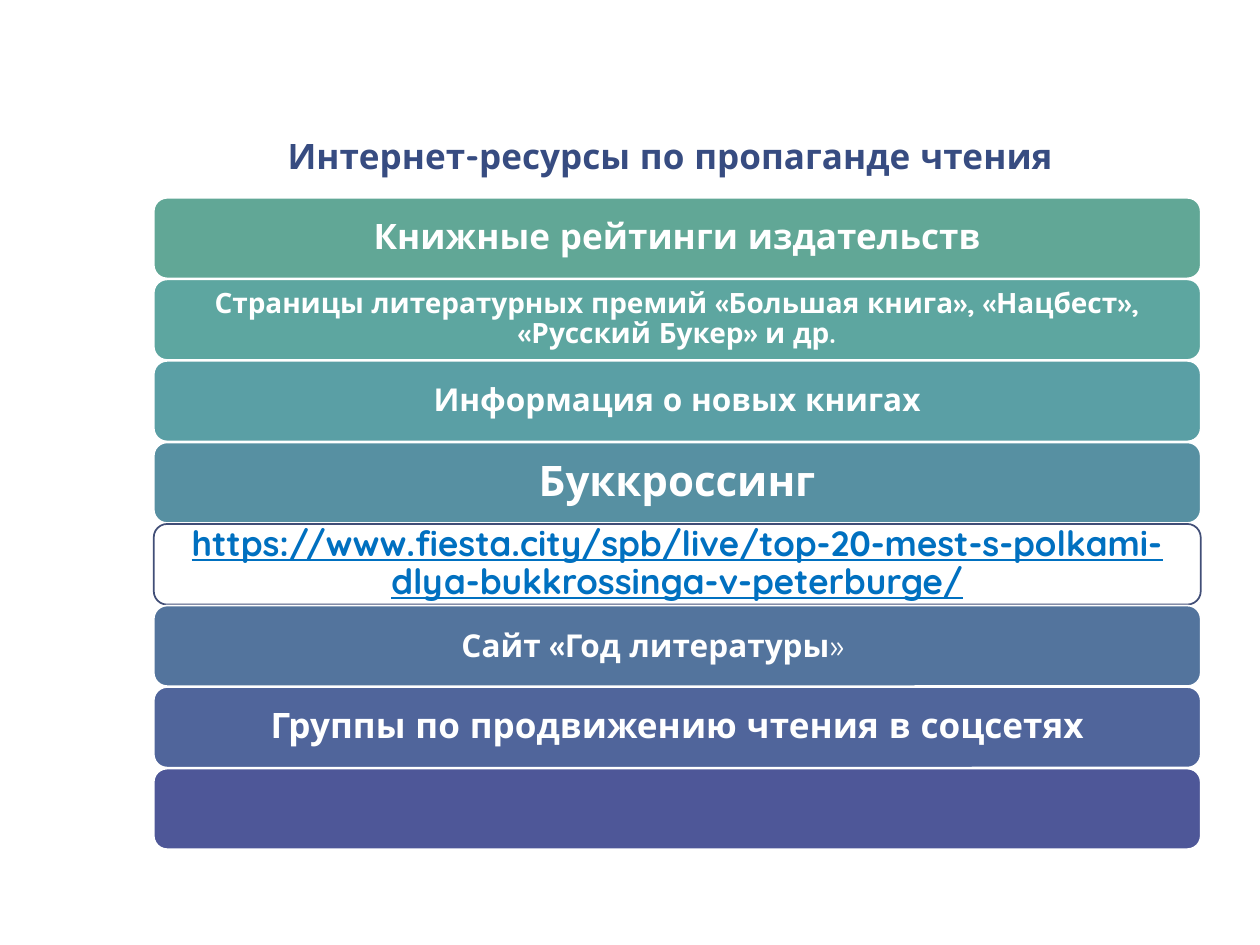
from pptx import Presentation, util as u
from pptx.dml.color import RGBColor
from pptx.enum import shapes, text

COLORS = {
    "white": "FFFFFF", "title": "374C81", "link": "0070C0", "outline": "414E77",
    "green": "61A796", "teal": "5DA6A0", "aqua": "5A9FA5", "sea": "5790A2",
    "steel": "53749D", "blue": "50659B", "indigo": "4E5798",
}

# fill, line, text, size, text colour, underline, inset
BARS = [
    ("green", "white", "Книжные рейтинги издательств", 20, "white", False, 0.11),
    ("teal", "white", "Страницы литературных премий «Большая книга», «Нацбест», "
     "«Русский Букер» и др.", 16, "white", False, 0.1),
    ("aqua", "white", "Информация о новых книгах", 18, "white", False, 0.1),
    ("sea", "white", "Буккроссинг", 24, "white", False, 0.13),
    ("white", "outline", "https://www.fiesta.city/spb/live/top-20-mest-s-polkami-"
     "dlya-bukkrossinga-v-peterburge/", 20, "link", True, 0.11),
    ("steel", "white", None, 18, "white", False, 0.1),
    ("blue", "white", "Группы по продвижению чтения в соцсетях", 20, "white", False, 0.11),
    ("indigo", "white", None, 20, "white", False, 0.1),
]
LEFT, WIDTH, HEIGHT = 1.22, 8.31, 0.64
FIRST_TOP, LAST_TOP = 1.57, 6.1


def color(name):
    return RGBColor.from_string(COLORS[name])


class ResourcePage:
    font = "Quicksand"

    def __init__(self, deck):
        self.page = deck.slides.add_slide(deck.slide_layouts[5])

    def fill_text(self, box, spans, size, tint, spacing=1.0, inset=(0.1, 0.05),
                  anchor=text.MSO_ANCHOR.MIDDLE, underline=None):
        """Fill a box with one centred paragraph of (words, bold) spans."""
        frame = box.text_frame
        across, down = map(u.Inches, inset)
        layout = {"word_wrap": True, "auto_size": text.MSO_AUTO_SIZE.NONE,
                  "vertical_anchor": anchor, "margin_left": across,
                  "margin_right": across, "margin_top": down, "margin_bottom": down}
        for name, value in layout.items():
            setattr(frame, name, value)
        para = frame.paragraphs[0]
        para.alignment = text.PP_ALIGN.CENTER
        para.line_spacing = spacing
        for words, bold in spans:
            span = para.add_run()
            span.text = words
            style = {"name": self.font, "size": u.Pt(size), "bold": bold,
                     "underline": underline}
            for name, value in style.items():
                setattr(span.font, name, value)
            span.font.color.rgb = color(tint)

    def title(self, words):
        box = self.page.shapes.title
        place = {"left": 1.5, "top": 0.21, "width": 7.64, "height": 1.26}
        for name, value in place.items():
            setattr(box, name, u.Inches(value))
        self.fill_text(box, [(words, True)], 20, "title", 0.85, (0.13, 0.07),
                       text.MSO_ANCHOR.BOTTOM)

    def bar(self, top, fill, line, words, size, tint, underline, inset):
        box = self.page.shapes.add_shape(
            shapes.MSO_SHAPE.ROUNDED_RECTANGLE,
            *map(u.Inches, (LEFT, top, WIDTH, HEIGHT)))
        box.shadow.inherit = False
        box.fill.solid()
        box.fill.fore_color.rgb = color(fill)
        box.line.color.rgb = color(line)
        box.line.width = u.Pt(1)
        if words:
            self.fill_text(box, [(words, True)], size, tint, 0.9, (inset, inset),
                           underline=underline)

    def label(self, place, spans, size, tint):
        box = self.page.shapes.add_textbox(*map(u.Inches, place))
        self.fill_text(box, spans, size, tint, anchor=text.MSO_ANCHOR.TOP)


def main():
    deck = Presentation()
    deck.slide_width, deck.slide_height = u.Inches(10), u.Inches(7.5)
    resources = ResourcePage(deck)
    resources.title("Интернет-ресурсы по пропаганде чтения")
    pitch = (LAST_TOP - FIRST_TOP) / (len(BARS) - 1)
    for row, bar in enumerate(BARS):
        resources.bar(FIRST_TOP + row * pitch, *bar)
    resources.label((1.61, 4.92, 7.14, 0.4),
                    [("Сайт «Год литературы", True), ("»", False)], 18, "white")
    deck.save("out.pptx")


if __name__ == "__main__":
    main()
